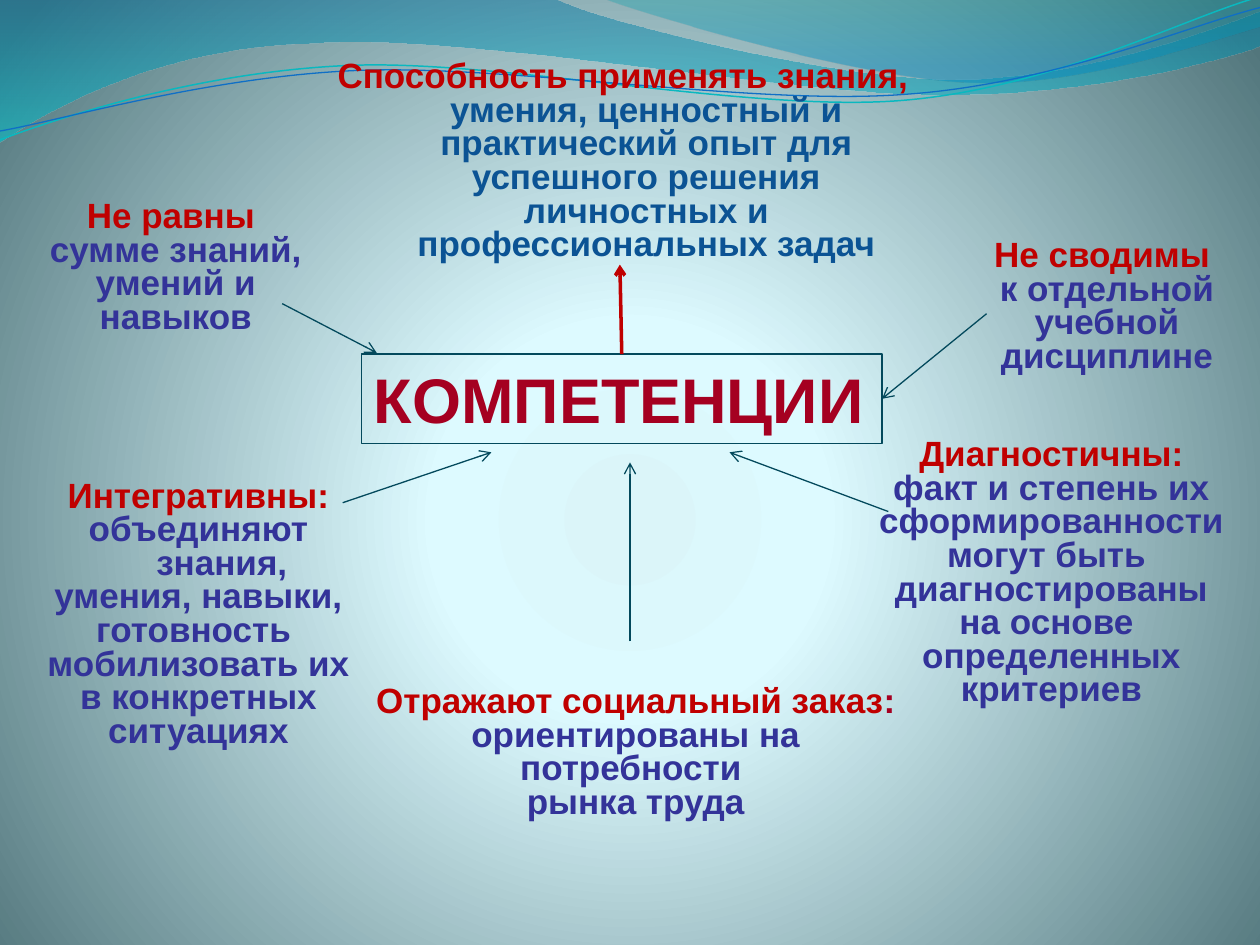
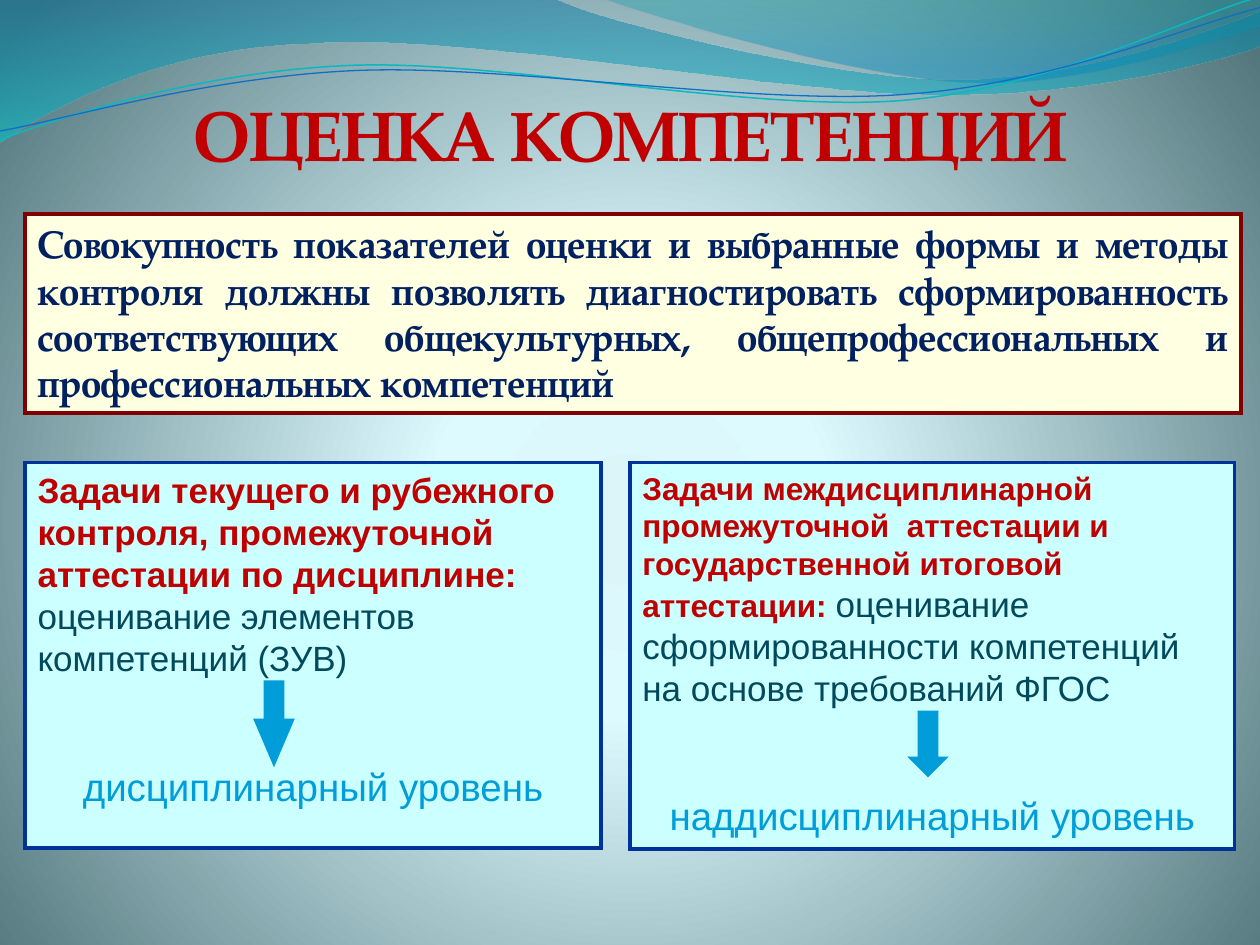
from lxml import etree
from pptx import Presentation
from pptx import util as u
from pptx.dml.color import RGBColor
from pptx.enum import shapes, text
from pptx.oxml.ns import qn
from pptx.util import Inches, Pt

RED = RGBColor(0xC0, 0x00, 0x00)
CRIMSON = RGBColor(0xA5, 0x00, 0x21)
MAROON = RGBColor(0x80, 0x00, 0x00)
BLUE = RGBColor(0x0B, 0x53, 0x94)
INDIGO = RGBColor(0x33, 0x33, 0x99)
NAVY = RGBColor(0x00, 0x20, 0x60)
ROYAL = RGBColor(0x00, 0x33, 0x99)
TEAL = RGBColor(0x03, 0x49, 0x5C)
SKY = RGBColor(0x00, 0x9D, 0xD9)
PALE_CYAN = RGBColor(0xCC, 0xFF, 0xFF)
CREAM = RGBColor(0xFF, 0xFF, 0xE1)
WAVE_CYAN = RGBColor(0x0A, 0xB8, 0xBF)
WAVE_BLUE = RGBColor(0x0F, 0x6F, 0xC6)

CENTER = text.PP_ALIGN.CENTER
LEFT = text.PP_ALIGN.LEFT
SERIF = "TeX Gyre Pagella"


def set_gradient(fill, parent, stops, direction, **direction_values):
    """Give fill a gradient of (position %, colour, opacity %) stops."""
    fill.gradient()
    gradient = parent.find(".//" + qn("a:gradFill"))
    for child in list(gradient):
        gradient.remove(child)
    stop_list = etree.SubElement(gradient, qn("a:gsLst"))
    for position, color, opacity in stops:
        stop = etree.SubElement(stop_list, qn("a:gs"), pos=str(position * 1000))
        rgb = etree.SubElement(stop, qn("a:srgbClr"), val=color)
        if opacity < 100:
            etree.SubElement(rgb, qn("a:alpha"), val=str(opacity * 1000))
    shade = etree.SubElement(gradient, qn("a:" + direction), **direction_values)
    if direction == "path":
        etree.SubElement(shade, qn("a:fillToRect"),
                         l="10000", t="110000", r="10000", b="100000")


def write_text(frame, paragraphs, wrap=True, grow=True, hanging=0, **paragraph_format):
    """Fill frame with paragraphs, each a list of (text, font format) runs."""
    frame.word_wrap = wrap
    frame.vertical_anchor = text.MSO_ANCHOR.TOP
    size = text.MSO_AUTO_SIZE
    frame.auto_size = size.SHAPE_TO_FIT_TEXT if grow else size.NONE
    for index, runs in enumerate(paragraphs):
        paragraph = frame.add_paragraph() if index else frame.paragraphs[0]
        for name, value in paragraph_format.items():
            setattr(paragraph, name, value)
        if hanging:
            properties = paragraph._p.get_or_add_pPr()
            properties.set("marL", str(Inches(hanging)))
            properties.set("indent", str(-Inches(hanging)))
        for words, font_format in runs:
            run = paragraph.add_run()
            run.text = words
            for name, value in {"name": "Arial", **font_format}.items():
                if name == "color":
                    run.font.color.rgb = value
                else:
                    setattr(run.font, name, value)


presentation = Presentation()
presentation.slide_width, presentation.slide_height = Inches(10), Inches(7.5)
master = presentation.slide_master
title_only, blank = presentation.slide_layouts[5], presentation.slide_layouts[6]

# Shared background and waves, kept on the master
set_gradient(master.background.fill, master.element.cSld,
             [(0, "DBF5F9", 100), (25, "DDFAFF", 100), (100, "52767C", 100)],
             "path", path="circle")
slide = presentation.slides.add_slide(blank)

# Every wave is a chain of parts: two numbers for a straight part, six for a curve
WAVES = [
    ([(0, 0), (4.4, -0.01), (4.76, 0.17, 6.64, 0.63, 7.58, 0.63),
      (8.53, 0.63, 9.58, 0.26, 10, 0.09), (10.01, 0.36),
      (9.83, 0.44, 8.7, 0.76, 7.46, 0.75), (6.22, 0.75, 3.82, 0.28, 2.57, 0.34),
      (1.29, 0.36, 0.46, 0.83, -0.01, 1.13)],
     [(0, "0074A1", 45), (100, "00C6CF", 55)], None),
    ([(4.79, -0.01), (5.09, 0.11, 6.82, 0.62, 7.69, 0.65),
      (8.56, 0.69, 9.61, 0.32, 10, 0.21), (10, 0)],
     [(0, "00A1A9", 30), (80, "008BBF", 45)], None),
    ([(0, 1.11), (0.48, 0.93, 1.58, 0.57, 2.77, 0.52),
      (3.95, 0.47, 5.93, 0.89, 7.13, 0.8), (8.33, 0.71, 9.38, 0.15, 9.98, -0.02)],
     None, (WAVE_CYAN, 0.85)),
    ([(0, 1.04), (0.47, 0.96, 1.64, 0.61, 2.83, 0.56),
      (4.03, 0.51, 5.97, 0.84, 7.17, 0.75), (8.36, 0.67, 9.41, 0.21, 10, 0.06)],
     None, (WAVE_BLUE, 0.75)),
]
for index, (parts, stops, stroke) in enumerate(WAVES):
    anchors = [(Inches(part[-2]), Inches(part[-1])) for part in parts]
    builder = slide.shapes.build_freeform(*anchors[0])
    builder.add_line_segments(anchors[1:], close=stops is not None)
    wave = builder.convert_to_shape()
    wave.shadow.inherit = False
    segments = list(wave.element.spPr.iter(qn("a:lnTo")))
    for segment, part in zip(segments, parts[1:]):
        if len(part) == 6:
            curve = etree.Element(qn("a:cubicBezTo"))
            for x, y in zip(part[::2], part[1::2]):
                etree.SubElement(curve, qn("a:pt"), x=str(Inches(x) - wave.left),
                                 y=str(Inches(y) - wave.top))
            segment.getparent().replace(segment, curve)
    if stops:
        set_gradient(wave.fill, wave.element.spPr, stops, "lin", ang="5400000", scaled="1")
        wave.line.fill.background()
    else:
        wave.fill.background()
        wave.line.color.rgb, wave.line.width = stroke[0], Pt(stroke[1])
    wave.element.nvSpPr.cNvPr.id = 20 + index
    master.shapes.element.append(wave.element)

# Slide 1: competences and their features
HEADING = {"size": Pt(20), "bold": True, "color": RED}
FEATURE = {**HEADING, "color": INDIGO}
FEATURES = [
    # left, top, width, height, wrap, hanging indent, paragraphs
    (2.48, 0.44, 4.93, 1.72, True, 0.37,
     [[("Способность применять знания, ", HEADING),
       ("умения, ценностный и практический опыт для успешного решения "
        "личностных и профессиональных задач", {**HEADING, "color": BLUE})]]),
    (0.12, 3.77, 2.91, 2.46, True, 0.37,
     [[("Интегративны:", HEADING)]] + [[(line, FEATURE)] for line in (
         "объединяют знания,", "умения, навыки,", "готовность ",
         "мобилизовать их", "в конкретных", "ситуациях")]),
    (6.81, 3.44, 3.07, 2.79, True, 0.37,
     [[("Диагностичны:", HEADING)]] + [[(line, FEATURE)] for line in (
         "факт и степень их", "сформированности", "могут быть ",
         "диагностированы", "на основе ", "определенных", "критериев")]),
    (2.87, 5.4, 4.35, 1.45, False, 0.37,
     [[("Отражают социальный заказ", HEADING), (":", {**HEADING, "color": CRIMSON})]]
     + [[(line, FEATURE)] for line in ("ориентированы на", "потребности ", "рынка труда")]),
    (0.2, 1.55, 2.39, 1.18, True, 0,
     [[("Не равны ", HEADING)], [("сумме знаний, умений и навыков", FEATURE)]]),
    (7.68, 1.86, 2.21, 1.18, True, 0,
     [[("Не сводимы ", HEADING)], [("к отдельной учебной дисциплине", FEATURE)]]),
]
for *place, wrap, hanging, paragraphs in FEATURES:
    box = slide.shapes.add_textbox(*map(Inches, place))
    write_text(box.text_frame, paragraphs, wrap, hanging=hanging,
               alignment=CENTER, line_spacing=0.8)

competences = slide.shapes.add_shape(shapes.MSO_SHAPE.RECTANGLE, Inches(2.87), Inches(2.81),
                                     Inches(4.13), Inches(0.71))
competences.shadow.inherit = False
competences.fill.background()
competences.line.color.rgb, competences.line.width = TEAL, Pt(0.75)
write_text(competences.text_frame,
           [[("КОМПЕТЕНЦИИ", {"size": Pt(36), "bold": True, "color": CRIMSON})]],
           wrap=False, alignment=LEFT)

ARROWS = [
    # start, end, colour, width, joined start side, joined end side
    (2.24, 2.41, 2.99, 2.8, TEAL, 0.75, None, None),
    (7.05, 4.06, 5.79, 3.59, TEAL, 0.75, None, None),
    (5, 5.09, 5, 3.67, TEAL, 0.75, None, None),
    (7.83, 2.49, 7, 3.16, TEAL, 0.75, None, 3),
    (4.94, 2.81, 4.92, 2.1, RED, 2, 0, None),
    (2.72, 3.99, 3.9, 3.59, TEAL, 0.75, None, None),
]
for *ends, color, width, start_side, end_side in ARROWS:
    arrow = slide.shapes.add_connector(shapes.MSO_CONNECTOR.STRAIGHT, *map(Inches, ends))
    if start_side is not None:
        arrow.begin_connect(competences, start_side)
    if end_side is not None:
        arrow.end_connect(competences, end_side)
    arrow.line.color.rgb, arrow.line.width = color, Pt(width)
    etree.SubElement(arrow.line._get_or_add_ln(), qn("a:tailEnd"), type="arrow")
    etree.SubElement(arrow.element.spPr, qn("a:effectLst"))

# Slide 2: assessment of competences
slide = presentation.slides.add_slide(title_only)
title = slide.shapes.title
for name, value in {"left": 1.23, "top": 0.68, "width": 7.54, "height": 0.77}.items():
    setattr(title, name, u.Inches(value))
write_text(title.text_frame,
           [[("ОЦЕНКА КОМПЕТЕНЦИЙ",
              {"name": SERIF, "size": Pt(40), "bold": True, "color": RED})]],
           wrap=False, hanging=0.38, alignment=CENTER)

TASK = {"size": Pt(20), "bold": False, "color": TEAL}
LEVEL = {"size": Pt(22), "bold": False, "color": SKY}
PANELS = [
    (5, 3.67, 4.8, 3.07, PALE_CYAN, ROYAL, LEFT,
     [[("Задачи междисциплинарной промежуточной  аттестации и  государственной "
        "итоговой аттестации: ", {**HEADING, "size": Pt(18)}),
       ("оценивание сформированности компетенций на основе требований ФГОС", TASK)],
      [("наддисциплинарный уровень", LEVEL)]]),
    (0.2, 3.67, 4.57, 3.06, PALE_CYAN, ROYAL, LEFT,
     [[("Задачи текущего и рубежного контроля, промежуточной аттестации "
        "по дисциплине:", HEADING)],
      [("оценивание элементов компетенций (ЗУВ)", TASK)],
      [("дисциплинарный уровень", LEVEL)]]),
    (0.2, 1.7, 9.65, 1.58, CREAM, MAROON, text.PP_ALIGN.JUSTIFY,
     [[("Совокупность показателей оценки и выбранные формы и методы контроля должны "
        "позволять диагностировать сформированность соответствующих общекультурных, "
        "общепрофессиональных и профессиональных компетенций",
        {"name": SERIF, "size": Pt(22), "bold": True, "color": NAVY})]]),
]
for *place, fill_color, line_color, alignment, paragraphs in PANELS:
    panel = slide.shapes.add_shape(shapes.MSO_SHAPE.RECTANGLE, *map(Inches, place))
    panel.shadow.inherit = False
    panel.fill.solid()
    panel.fill.fore_color.rgb = fill_color
    panel.line.color.rgb, panel.line.width = line_color, Pt(2)
    etree.SubElement(panel.line._get_or_add_ln(), qn("a:miter"), lim="800000")
    write_text(panel.text_frame, paragraphs, grow=False, alignment=alignment)
    if len(paragraphs) > 1:
        level = panel.text_frame.paragraphs[-1]
        level.alignment, level.space_before = CENTER, Pt(48)

for left, top, height, head in [(2.01, 5.4, 0.69, 1.17), (7.2, 5.64, 0.53, 0.5)]:
    arrow = slide.shapes.add_shape(shapes.MSO_SHAPE.DOWN_ARROW, Inches(left), Inches(top),
                                   Inches(0.33), Inches(height))
    arrow.shadow.inherit = False
    arrow.adjustments[1] = head
    arrow.fill.solid()
    arrow.fill.fore_color.rgb = SKY
    arrow.line.fill.background()

presentation.save("out.pptx")
